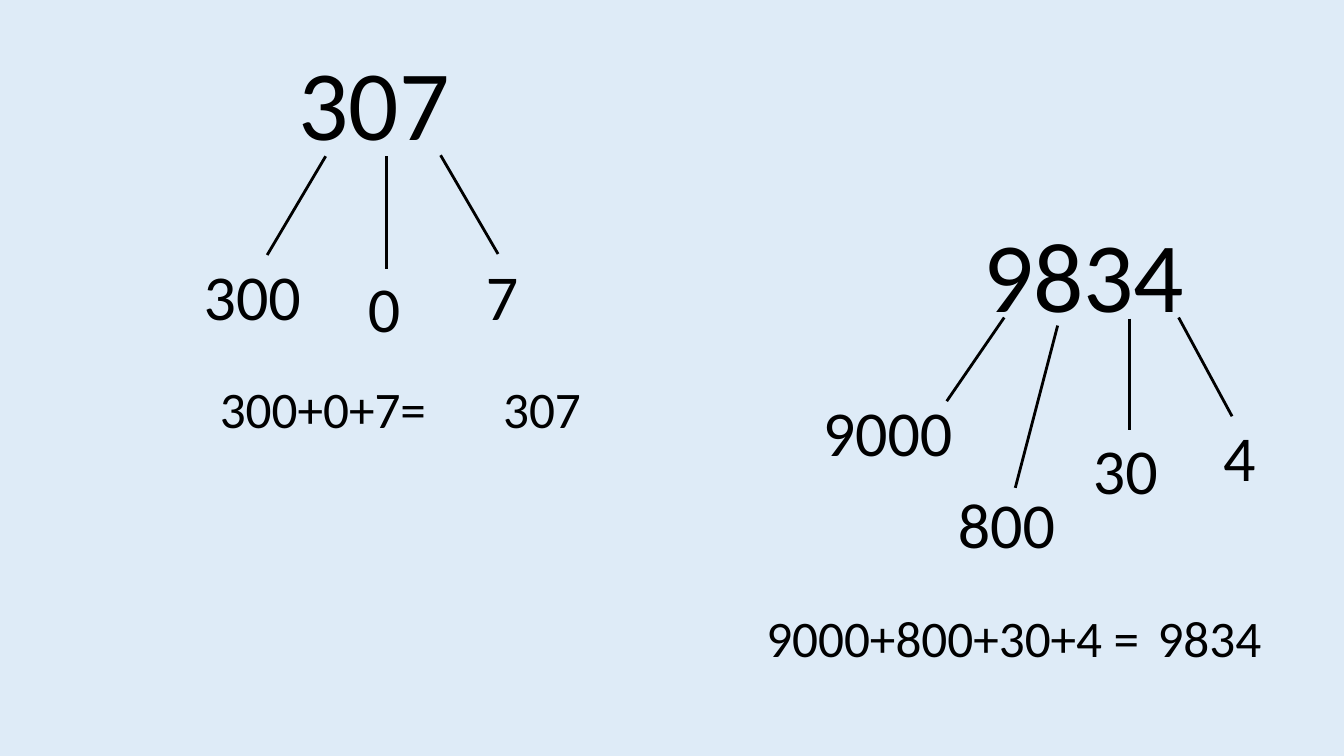
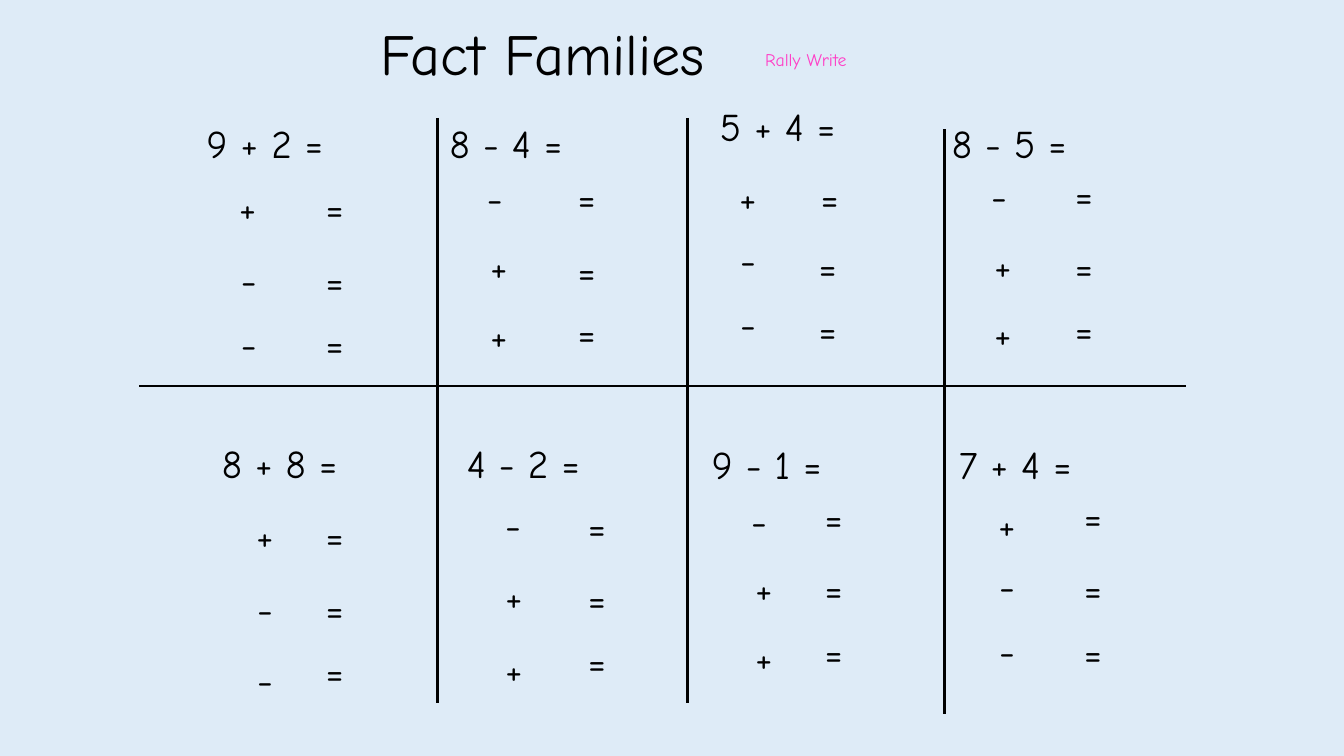
from pptx import Presentation
from pptx.dml.color import RGBColor
from pptx.enum.shapes import MSO_CONNECTOR
from pptx.enum.text import MSO_ANCHOR, MSO_AUTO_SIZE
from pptx.oxml.ns import qn
from pptx.util import Pt
from lxml import etree

PX = 9144
STRAIGHT = MSO_CONNECTOR.STRAIGHT
MIDDLE = MSO_ANCHOR.MIDDLE
GROW = MSO_AUTO_SIZE.SHAPE_TO_FIT_TEXT
SKY, BLACK, PINK = "DEEBF7", "000000", "FF3FC7"
PLAIN, COMIC = "Calibri", "Comic Neue"
BIG, PART, SUM = 71, 45.7, 36.6
TITLE, FACT, NOTE = 41.5, 28.1, 12.7
WIDTH = {"+": 39, "-": 36, "=": 40}


def label(slide, text, x, y, w, size, font, color=BLACK):
    h = round(1.7 * size + 7)
    box = slide.shapes.add_textbox(x * PX, y * PX, w * PX, h * PX)
    frame = box.text_frame
    frame.word_wrap = False
    frame.auto_size = GROW
    frame.vertical_anchor = MIDDLE
    frame.margin_left = frame.margin_right = 4 * PX
    frame.margin_top = frame.margin_bottom = 4 * PX
    para = frame.paragraphs[0]
    para.text = text
    para.font.size = Pt(size)
    para.font.name = font
    para.font.color.rgb = RGBColor.from_string(color)


def rule(slide, x1, y1, x2, y2):
    line = slide.shapes.add_connector(STRAIGHT, x1 * PX, y1 * PX, x2 * PX, y2 * PX)
    line.line.color.rgb = RGBColor.from_string(BLACK)
    line.line.width = Pt(2)
    etree.SubElement(line._element.spPr, qn("a:effectLst"))


deck = Presentation()
deck.slide_width = 1333 * PX
deck.slide_height = 750 * PX
slides = []
for _ in range(2):
    slide = deck.slides.add_slide(deck.slide_layouts[6])
    slide.background.fill.solid()
    slide.background.fill.fore_color.rgb = RGBColor.from_string(SKY)
    slides.append(slide)
values, facts = slides

numbers = [
    ("307", 292, 36, 159, BIG),
    ("300", 198, 250, 105, PART),
    ("0", 361, 262, 40, PART),
    ("7", 478, 250, 40, PART),
    ("300+0+7=", 214, 370, 214, SUM),
    ("307", 495, 370, 86, SUM),
    ("9834", 971, 207, 210, BIG),
    ("9000", 812, 385, 138, PART),
    ("800", 946, 476, 105, PART),
    ("30", 1080, 423, 73, PART),
    ("4", 1209, 410, 40, PART),
    ("9000+800+30+4 =", 756, 597, 381, SUM),
    ("9834", 1144, 597, 112, SUM),
]
for text, x, y, w, size in numbers:
    label(values, text, x, y, w, size, PLAIN)

branches = [
    (323, 155, 265, 253),
    (383, 155, 383, 267),
    (437, 154, 494, 252),
    (996, 315, 939, 398),
    (1049, 323, 1007, 484),
    (1120, 316, 1120, 427),
    (1169, 315, 1222, 413),
]
for ends in branches:
    rule(values, *ends)

label(facts, "Fact Families", 373, 13, 367, TITLE, COMIC)
label(facts, "Rally Write", 755, 44, 103, NOTE, COMIC, PINK)

rule(facts, 138, 383, 1176, 383)
for x, top in [(434, 117), (682, 117), (937, 128)]:
    rule(facts, x, top, x, top + 580)

families = [
    ("9 + 2 =", 201, 114, 142,
     [("+", 233, 178, 319, 178), ("-", 235, 249, 319, 250), ("-", 235, 313, 319, 313)]),
    ("8 - 4 =", 442, 114, 140,
     [("-", 479, 168, 569, 168), ("+", 482, 236, 569, 240), ("+", 482, 305, 569, 302)]),
    ("5 + 4 =", 710, 97, 142,
     [("+", 729, 168, 810, 168), ("-", 730, 229, 808, 236), ("-", 730, 293, 808, 299)]),
    ("8 - 5 =", 940, 114, 140,
     [("-", 979, 166, 1062, 165), ("+", 982, 235, 1062, 236), ("+", 982, 303, 1062, 299)]),
    ("8 + 8 =", 216, 432, 142,
     [("+", 250, 503, 319, 503), ("-", 251, 575, 319, 575), ("-", 251, 646, 319, 638)]),
    ("4 - 2 =", 459, 432, 140,
     [("-", 497, 492, 579, 494), ("+", 497, 564, 579, 566), ("+", 497, 636, 579, 628)]),
    ("9 - 1 =", 702, 433, 133,
     [("-", 741, 488, 814, 485), ("+", 745, 556, 814, 556), ("+", 745, 624, 814, 619)]),
    ("7 + 4 =", 947, 433, 142,
     [("+", 986, 492, 1071, 484), ("-", 987, 553, 1071, 556), ("-", 987, 617, 1071, 619)]),
]
for fact, x, y, w, rows in families:
    label(facts, fact, x, y, w, FACT, COMIC)
    for sign, sx, sy, ex, ey in rows:
        label(facts, sign, sx, sy, WIDTH[sign], FACT, COMIC)
        label(facts, "=", ex, ey, WIDTH["="], FACT, COMIC)

deck.save("out.pptx")
